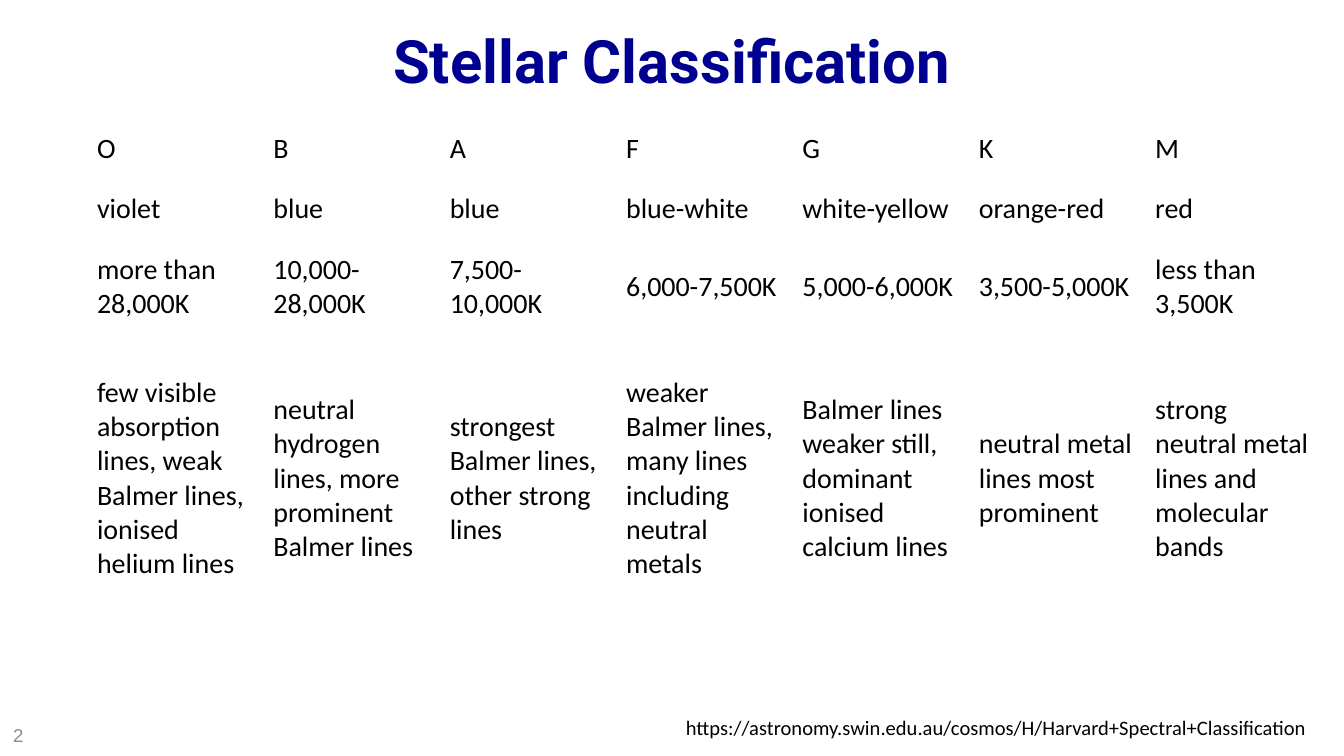
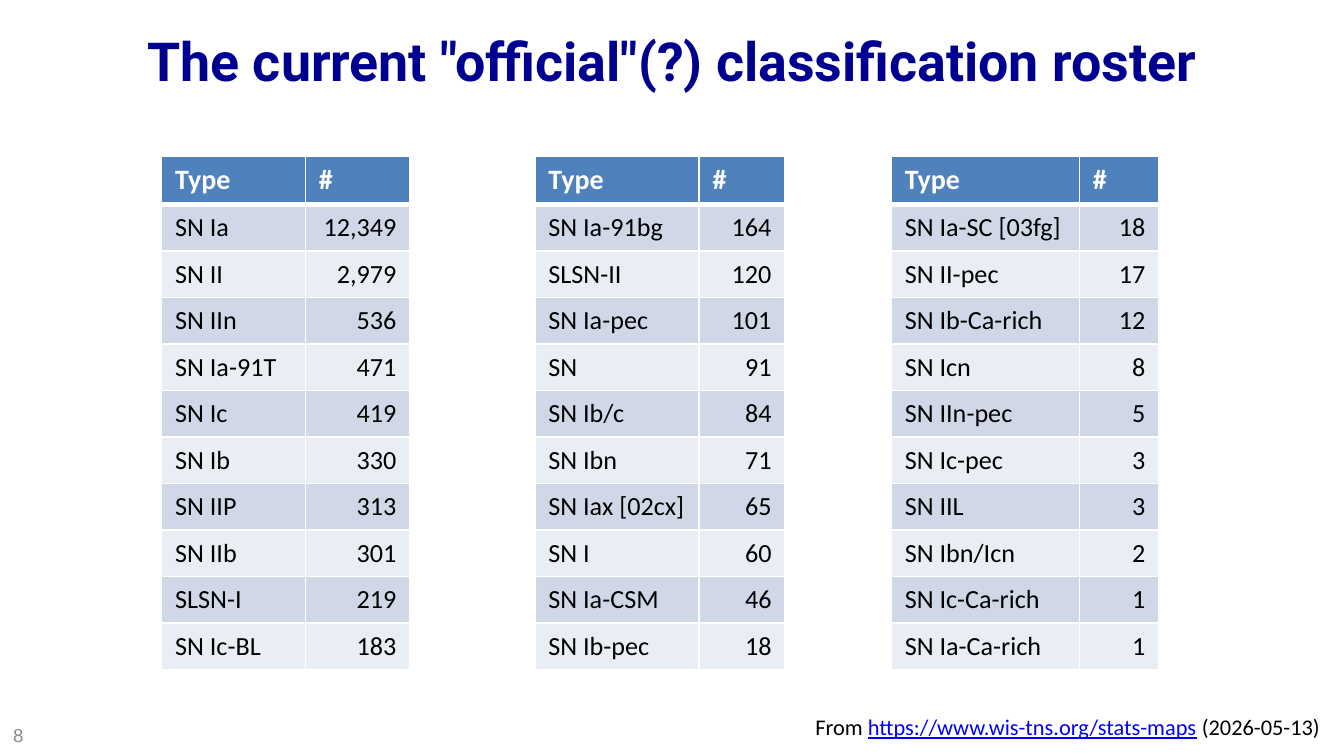
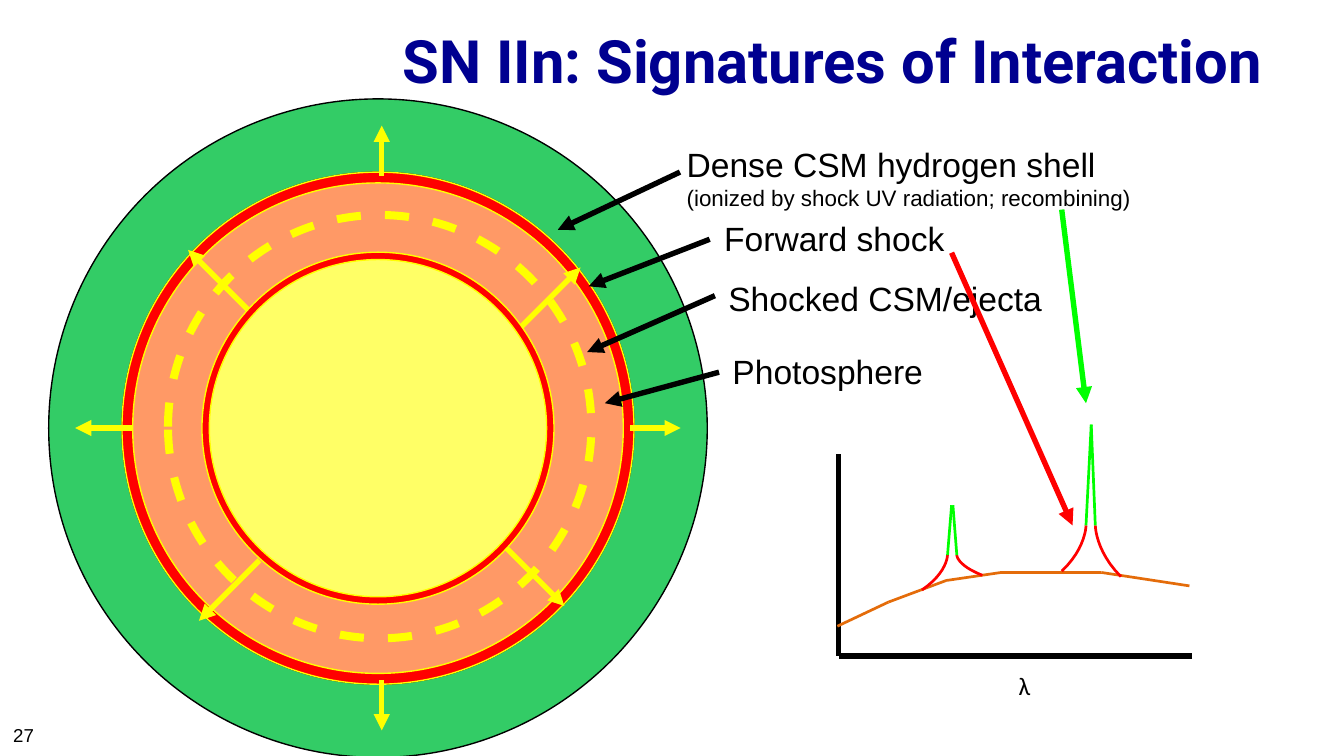
import itertools

import pptx
import pptx.dml.color
import pptx.enum.dml
import pptx.enum.shapes
import pptx.enum.text
import pptx.oxml.ns
import pptx.util
from lxml import etree

Pt = pptx.util.Pt
qn = pptx.oxml.ns.qn
Shape = pptx.enum.shapes.MSO_SHAPE
Align = pptx.enum.text.PP_ALIGN
Anchor = pptx.enum.text.MSO_ANCHOR
AutoSize = pptx.enum.text.MSO_AUTO_SIZE

COLORS = {
    "title": "000090", "text": "000000", "muted": "8C8C8C", "link": "0000FF",
    "white": "FFFFFF", "header": "4F81BD", "band": "D0D8E8", "band_light": "E9EDF4",
    "csm": "33CC66", "shocked": "FF9966", "ejecta": "FFFF66",
    "shock": "FF0000", "flow": "FFFF00", "narrow": "00FF00", "continuum": "E46C0A",
}
THICK, THIN = 2.89, 1.45

STELLAR_ROWS = [
    ["O", "B", "A", "F", "G", "K", "M"],
    ["violet", "blue", "blue", "blue-white", "white-yellow", "orange-red", "red"],
    ["more than 28,000K", "10,000-28,000K", "7,500-10,000K", "6,000-7,500K",
     "5,000-6,000K", "3,500-5,000K", "less than 3,500K"],
    ["few visible absorption lines, weak Balmer lines, ionised helium lines",
     "neutral hydrogen lines, more prominent Balmer lines",
     "strongest Balmer lines, other strong lines",
     "weaker Balmer lines, many lines including neutral metals",
     "Balmer lines weaker still, dominant ionised calcium lines",
     "neutral metal lines most prominent",
     "strong neutral metal lines and molecular bands"],
]
ROSTER = [
    [("SN Ia", "12,349"), ("SN II", "2,979"), ("SN IIn", "536"), ("SN Ia-91T", "471"),
     ("SN Ic", "419"), ("SN Ib", "330"), ("SN IIP", "313"), ("SN IIb", "301"),
     ("SLSN-I", "219"), ("SN Ic-BL", "183")],
    [("SN Ia-91bg", "164"), ("SLSN-II", "120"), ("SN Ia-pec", "101"), ("SN", "91"),
     ("SN Ib/c", "84"), ("SN Ibn", "71"), ("SN Iax [02cx]", "65"), ("SN I", "60"),
     ("SN Ia-CSM", "46"), ("SN Ib-pec", "18")],
    [("SN Ia-SC [03fg]", "18"), ("SN II-pec", "17"), ("SN Ib-Ca-rich", "12"),
     ("SN Icn", "8"), ("SN IIn-pec", "5"), ("SN Ic-pec", "3"), ("SN IIL", "3"),
     ("SN Ibn/Icn", "2"), ("SN Ic-Ca-rich", "1"), ("SN Ia-Ca-rich", "1")],
]


def rgb(name):
    return pptx.dml.color.RGBColor.from_string(COLORS[name])


class Talk:
    """Holds the deck style and draws each kind of element on the current page."""

    def __init__(self):
        self.deck = pptx.Presentation()
        self.deck.slide_width, self.deck.slide_height = Pt(720), Pt(405)
        self.page = None

    def start(self, title, number, size=32, align=Align.CENTER, number_color="muted"):
        self.page = self.deck.slides.add_slide(self.deck.slide_layouts[5])
        box = self.page.shapes.title
        box.left, box.top, box.width, box.height = Pt(36), Pt(5), Pt(648), Pt(54)
        frame = box.text_frame
        frame.auto_size = AutoSize.NONE
        frame.vertical_anchor = Anchor.MIDDLE
        frame.text = title
        self.style(frame.paragraphs[0], size, "title", "Roboto", True, align)
        self.text((0, 383, 37.5, 21.6), [number], 10, color=number_color, anchor=Anchor.MIDDLE)

    def style(self, para, size, color="text", font="Calibri", bold=False, align=Align.LEFT):
        para.alignment = align
        para.font.size, para.font.name, para.font.bold = Pt(size), font, bold
        para.font.color.rgb = rgb(color)

    def text(self, place, spans, size, color="text", font="Arial", align=Align.LEFT,
             anchor=Anchor.TOP, insets=(7.2, 3.6), grow=False):
        box = self.page.shapes.add_textbox(*map(Pt, place))
        frame = box.text_frame
        frame.word_wrap = True
        frame.auto_size = AutoSize.SHAPE_TO_FIT_TEXT if grow else AutoSize.NONE
        frame.vertical_anchor = anchor
        frame.margin_left = frame.margin_right = Pt(insets[0])
        frame.margin_top = frame.margin_bottom = Pt(insets[1])
        para = frame.paragraphs[0]
        runs = []
        for span in spans:
            if span == "\n":
                para.add_line_break()
            else:
                run = para.add_run()
                run.text = span
                runs.append(run)
        self.style(para, size, color, font, align=align)
        return runs

    def table(self, left, top, widths, heights):
        frame = self.page.shapes.add_table(
            len(heights), len(widths), Pt(left), Pt(top), Pt(sum(widths)), Pt(sum(heights)))
        table = frame.table
        table.first_row = table.horz_banding = False
        for column, width in zip(table.columns, widths):
            column.width = Pt(width)
        for row, height in zip(table.rows, heights):
            row.height = Pt(height)
        return table

    def cell(self, cell, words, size, fill=None, anchor=Anchor.MIDDLE, **look):
        cell.vertical_anchor = anchor
        cell.text = words
        para = cell.text_frame.paragraphs[0]
        if not words:
            etree.SubElement(para._p, qn("a:endParaRPr"), sz=str(size * 100))
        self.style(para, size, **look)
        if fill:
            cell.fill.solid()
            cell.fill.fore_color.rgb = rgb(fill)
        else:
            cell.fill.background()

    def borders(self, cell, bottom=1):
        for side, width in (("L", 1), ("R", 1), ("B", bottom)):
            line = etree.SubElement(cell._tc.get_or_add_tcPr(), qn("a:ln" + side),
                                    w=str(Pt(width)))
            fill = etree.SubElement(line, qn("a:solidFill"))
            etree.SubElement(fill, qn("a:srgbClr"), val=COLORS["white"])

    def disc(self, center, diameter, fill=None, line=None, width=0.75, ring=None, dash=None):
        x, y = (value - diameter / 2 for value in center)
        kind = Shape.DONUT if ring else Shape.OVAL
        shape = self.page.shapes.add_shape(kind, Pt(x), Pt(y), Pt(diameter), Pt(diameter))
        shape.shadow.inherit = False
        if ring:
            shape.adjustments[0] = ring
        if fill:
            shape.fill.solid()
            shape.fill.fore_color.rgb = rgb(fill)
        else:
            shape.fill.background()
        if line:
            shape.line.color.rgb = rgb(line)
            shape.line.width = Pt(width)
        else:
            shape.line.fill.background()
        if dash:
            pattern = etree.SubElement(shape.line._get_or_add_ln(), qn("a:custDash"))
            etree.SubElement(pattern, qn("a:ds"), d=str(dash * 100000), sp=str(dash * 100000))

    def line(self, start, end, color="text", width=THICK, arrow=False):
        line = self.page.shapes.add_connector(
            pptx.enum.shapes.MSO_CONNECTOR.STRAIGHT, *map(Pt, (*start, *end)))
        line.line.color.rgb = rgb(color)
        line.line.width = Pt(width)
        if arrow:
            etree.SubElement(line.line._get_or_add_ln(), qn("a:tailEnd"), type="triangle")
        etree.SubElement(line._element.spPr, qn("a:effectLst"))

    def wing(self, foot, shoulder, color="shock", steps=12):
        middle = (foot[1] + shoulder[1]) / 2
        points = []
        for step in range(1, steps + 1):
            t = step / steps
            a, b = (1 - t) ** 3, 3 * t * (1 - t) ** 2
            c = 1 - a - b
            points.append((Pt(a * foot[0] + (b + c) * shoulder[0]),
                           Pt(a * foot[1] + b * middle + c * shoulder[1])))
        builder = self.page.shapes.build_freeform(Pt(foot[0]), Pt(foot[1]))
        builder.add_line_segments(points, close=False)
        shape = builder.convert_to_shape()
        shape.shadow.inherit = False
        shape.fill.background()
        shape.line.color.rgb = rgb(color)
        shape.line.width = Pt(THIN)


def stellar_page(talk):
    talk.start("Stellar Classification", "2")
    table = talk.table(46, 67.7, [94.5] * 7, [23, 40.3, 40.3, 162.7])
    for row, words in enumerate(STELLAR_ROWS):
        for column, word in enumerate(words):
            cell = table.cell(row, column)
            cell.margin_left = cell.margin_right = Pt(6)
            cell.margin_top = cell.margin_bottom = Pt(3)
            talk.cell(cell, word, 15)
    talk.text((335.5, 379.4, 371.5, 21),
              ["https://astronomy.swin.edu.au/cosmos/H/Harvard+Spectral+Classification"],
              11, font="Calibri", align=Align.RIGHT, grow=True)


def roster_page(talk):
    talk.start('The current "official"(?) classification roster', "8", size=28.8)
    table = talk.table(86.6, 83.8, [77, 56, 67, 88, 46, 57, 100.8, 42.5], [24.95] * 11)
    rows = [[("Type", "#")] * 3, *zip(*ROSTER)]
    for row, (first, second, third) in enumerate(rows):
        band = "band" if row % 2 else "band_light"
        for column, word in enumerate([*first, "", *second, "", *third]):
            cell = table.cell(row, column)
            talk.borders(cell, bottom=1 if row else 3)
            if row == 0:
                talk.cell(cell, word, 15, "header" if word else None, Anchor.TOP,
                          color="white", bold=True)
            else:
                align = Align.RIGHT if column % 3 == 1 else Align.LEFT
                talk.cell(cell, word, 14, band if word else None, align=align)
    runs = talk.text((412.5, 378.7, 301.7, 21.6),
                     ["From ", "https://www.wis-tns.org/stats-maps", " (2026-05-13)"],
                     12, font="Calibri", align=Align.RIGHT, grow=True)
    runs[1].font.color.rgb = rgb("link")
    runs[1].font.underline = True


def supernova(talk):
    center = (202.5, 229.4)
    talk.disc(center, 352.8, "csm", "text", ring=0.167)
    talk.disc(center, 274.3, "shocked", "text", ring=0.207)
    talk.disc(center, 188.6, "ejecta")
    talk.disc(center, 274.3, "shock", "flow", ring=0.021)
    for x, y, dx, dy in [
        (337.7, 229.3, 27, 0), (204.5, 94.3, 0, -27), (71.3, 229.3, -31, 0),
        (204.5, 364.3, 0, 27), (278.6, 175.7, 32.4, -32.4), (133.2, 166.3, -32.4, -32.4),
        (139, 300.2, -32.4, 32.4), (270, 292.3, 32.4, 32.4),
    ]:
        talk.line((x, y), (x + dx, y + dy), "flow", arrow=True)
    talk.disc(center, 188.6, "shock", "flow", ring=0.021)
    talk.disc((203.4, 228.6), 226.8, line="flow", width=4.31, dash=3)


def spectrum(talk):
    origin = (449.3, 351.4)
    talk.line((638.6, 351.4), origin)
    talk.line((449.3, 243.4), origin)
    continuum = [(448.6, 335.5), (475.9, 322.6), (506.9, 311), (536.4, 306.7),
                 (590, 306.7), (637.2, 313.9)]
    for start, end in itertools.pairwise(continuum):
        talk.line(start, end, "continuum", THIN)
    for foot, shoulder, tip in [
        ((493.9, 316.1), (507.6, 297.4), (509.8, 270.7)),
        ((526.3, 308.2), (512.6, 297.4), (510.5, 270.7)),
        ((568.8, 306), (581.8, 281.5), (584.6, 227.5)),
        ((600.5, 308.9), (586.8, 281.5), (584.6, 227.5)),
    ]:
        talk.wing(foot, shoulder)
        talk.line(shoulder, tip, "narrow", THIN)
    talk.text((538.6, 355.7, 25.2, 23.8), ["λ"], 13.5, font="Calibri", grow=True)


def interaction_page(talk):
    talk.start("SN IIn: Signatures of Interaction", "27", align=Align.RIGHT,
               number_color="text")
    supernova(talk)
    shell = ["Dense CSM hydrogen shell", "\n", "(ionized by shock UV radiation; recombining)"]
    for place, spans, start, end in [
        ((362.9, 74.2, 285, 38.9), shell, (364.3, 92.2), (298.8, 123.1)),
        ((383, 113.8, 188.6, 25.2), ["Forward shock"], (380.2, 128.2), (315.4, 153.4)),
        ((385.2, 146.2, 188.6, 25.2), ["Shocked CSM/ejecta"], (383, 158.4), (314.6, 188.6)),
        ((387.4, 185, 135.4, 25.2), ["Photosphere"], (385.2, 199.4), (324, 216)),
    ]:
        runs = talk.text(place, spans, 18, insets=(5, 2.9))
        for run in runs[1:]:
            run.font.size = Pt(12)
        talk.line(start, end, arrow=True)
    spectrum(talk)
    talk.line((568.8, 112.3), (581.8, 216), "narrow", arrow=True)
    talk.line((509.8, 135.4), (574.6, 281.5), "shock", arrow=True)


def main():
    talk = Talk()
    for build in (stellar_page, roster_page, interaction_page):
        build(talk)
    talk.deck.save("out.pptx")


if __name__ == "__main__":
    main()
